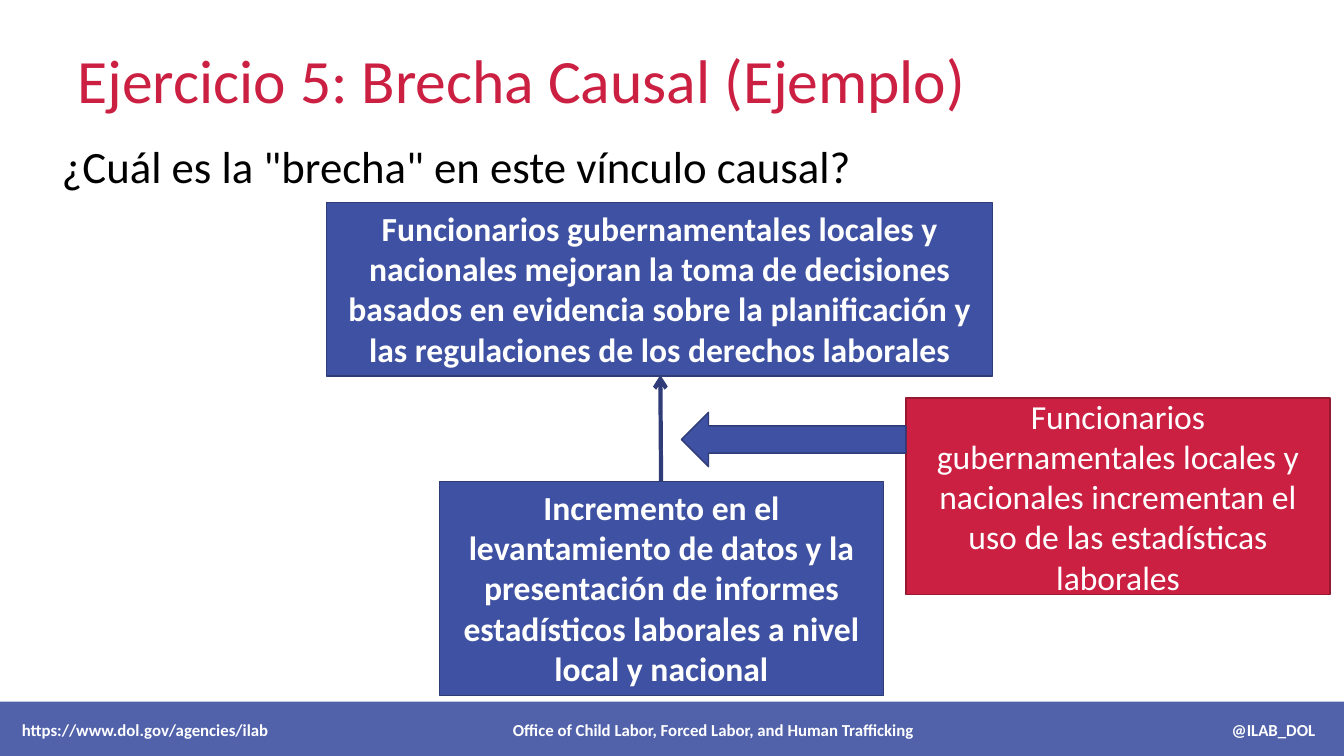
from lxml import etree
from pptx import Presentation
from pptx import util as u
from pptx.dml.color import RGBColor
from pptx.enum import shapes, text
from pptx.oxml import ns

RED = RGBColor(0xCB, 0x20, 0x42)
WINE = RGBColor(0x96, 0x18, 0x31)
BLUE = RGBColor(0x3F, 0x51, 0xA2)
NAVY = RGBColor(0x2F, 0x3C, 0x78)
WHITE = RGBColor(0xFF, 0xFF, 0xFF)
BLACK = RGBColor(0, 0, 0)

TOP = text.MSO_ANCHOR.TOP
MID = text.MSO_ANCHOR.MIDDLE
LEFT = text.PP_ALIGN.LEFT
MAIN = text.PP_ALIGN.CENTER
KIND = shapes.MSO_SHAPE


def apply(obj, vals):
    for key, val in vals.items():
        setattr(obj, key, val)


def node(base, tag, **attrs):
    return etree.SubElement(base, ns.qn(tag), attrs)


def place(shape, box):
    keys = ("left", "top", "width", "height")
    apply(shape, dict(zip(keys, (u.Cm(v) for v in box))))


def write(shape, words, size, color, bold=False, align=LEFT, anchor=MID):
    frame = shape.text_frame
    frame.text = words
    apply(frame, {"word_wrap": True, "vertical_anchor": anchor,
                  "auto_size": text.MSO_AUTO_SIZE.NONE})
    para = frame.paragraphs[0]
    apply(para, {"alignment": align, "space_before": u.Pt(0)})
    font = para.runs[0].font
    apply(font, {"name": "Calibri", "size": u.Pt(size), "bold": bold})
    font.color.rgb = color
    return para


def block(slide, kind, box, fill, edge=None):
    shape = slide.shapes.add_shape(kind, *(u.Cm(v) for v in box))
    shape.shadow.inherit = False
    shape.fill.solid()
    shape.fill.fore_color.rgb = fill
    if edge is None:
        shape.line.fill.background()
    else:
        shape.line.color.rgb = edge
        shape.line.width = u.Pt(1)
    return shape


def card(slide, box, words, fill, edge, **style):
    shape = block(slide, KIND.RECTANGLE, box, fill, edge)
    write(shape, words, 24, WHITE, align=MAIN, **style)


def link(slide, start, end):
    ends = (u.Cm(v) for v in start + end)
    line = slide.shapes.add_connector(shapes.MSO_CONNECTOR.STRAIGHT, *ends)
    line.line.color.rgb = NAVY
    line.line.width = u.Pt(3)
    node(line.line._get_or_add_ln(), "a:tailEnd", type="arrow")
    node(line._element.spPr, "a:effectLst")


def footer(slide, box, parts, stops):
    bar = block(slide, KIND.RECTANGLE, box, BLUE)
    tint = bar._element.spPr.find(".//" + ns.qn("a:srgbClr"))
    node(tint, "a:alpha", val="90000")
    para = write(bar, "\t".join(parts), 12, WHITE, bold=True)
    bar.text_frame.margin_left = u.Cm(0.55)
    tabs = node(para._p.get_or_add_pPr(), "a:tabLst")
    for pos, side in stops:
        node(tabs, "a:tab", pos=str(int(u.Cm(pos))), algn=side)


def main():
    deck = Presentation()
    apply(deck, {"slide_width": u.Cm(33.87), "slide_height": u.Cm(19.05)})
    slide = deck.slides.add_slide(deck.slide_layouts[1])

    # Title and question
    title, body = slide.placeholders
    place(title, (1.7, 1.19, 23.5, 1.57))
    write(title, "Ejercicio 5: Brecha Causal (Ejemplo)", 44, RED)
    place(body, (1.3, 3.02, 24.33, 2.31))
    para = write(body, '¿Cuál es la "brecha" en este vínculo causal?', 32, BLACK)
    props = para._p.get_or_add_pPr()
    apply(para, {"level": 0})
    for key in ("marL", "indent"):
        props.set(key, "0")
    node(props, "a:buNone")

    # Causal chain
    card(slide, (11.07, 12.14, 11.2, 5.38),
         "Incremento en el levantamiento de datos y la presentación de "
         "informes estadísticos laborales a nivel local y nacional",
         BLUE, NAVY, bold=True, anchor=TOP)
    card(slide, (22.83, 10.03, 10.69, 4.95),
         "Funcionarios gubernamentales locales y nacionales incrementan "
         "el uso de las estadísticas laborales", RED, WINE)
    arrow = block(slide, KIND.RIGHT_ARROW, (17.17, 10.39, 5.66, 1.37), BLUE, NAVY)
    arrow.rotation = 180
    link(slide, (16.66, 12.14), (16.64, 9.45))
    card(slide, (8.23, 5.11, 16.79, 4.37),
         "Funcionarios gubernamentales locales y nacionales mejoran la toma "
         "de decisiones basados en evidencia sobre la planificación y las "
         "regulaciones de los derechos laborales",
         BLUE, NAVY, bold=True, anchor=TOP)

    # Footer bar
    footer(slide, (0, 17.68, 33.96, 1.42),
           ("https://www.dol.gov/agencies/ilab",
            "Office of Child Labor, Forced Labor, and Human Trafficking",
            "@ILAB_DOL"),
           ((17.43, "ctr"), (32.6, "r")))

    deck.save("out.pptx")


if __name__ == "__main__":
    main()
